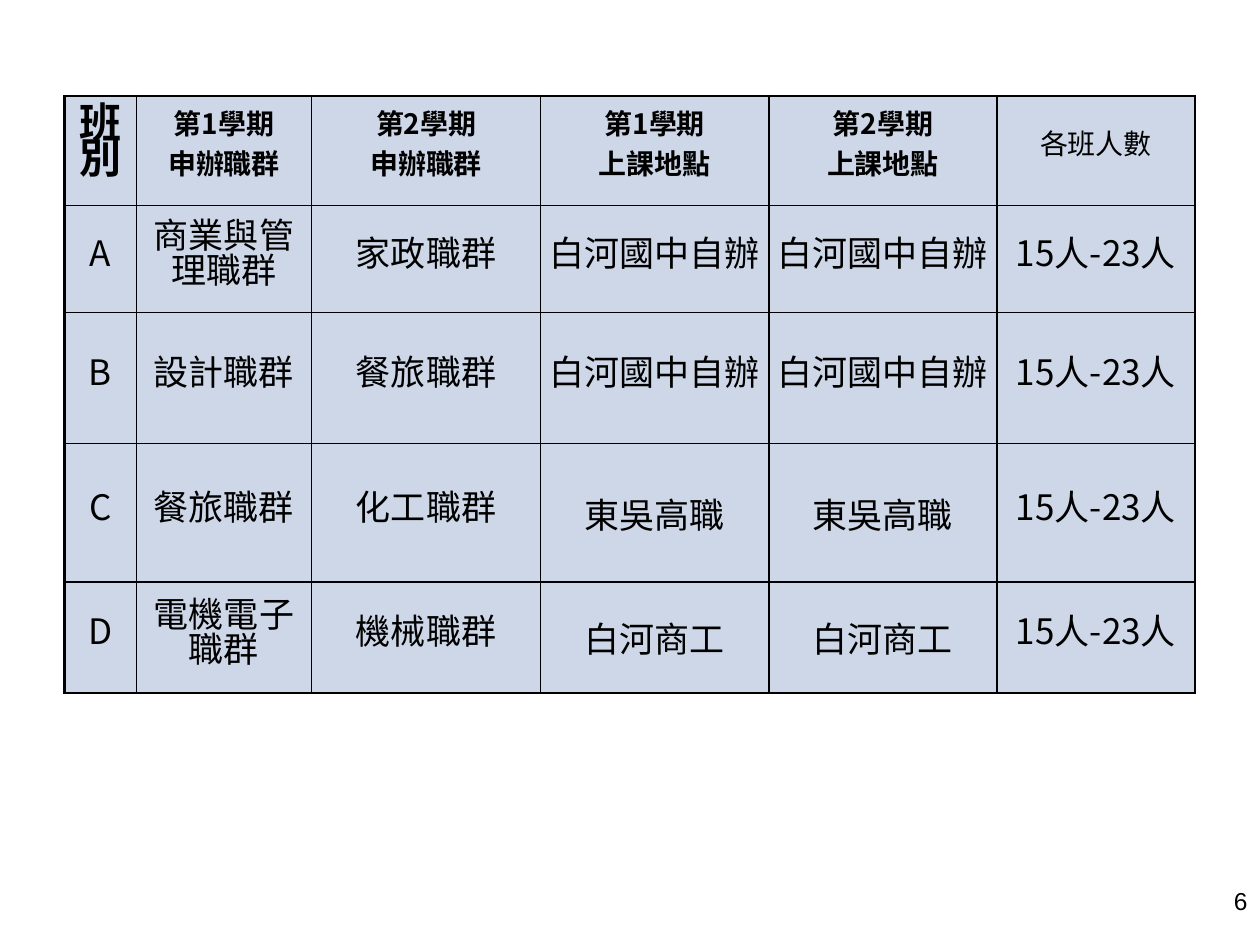
from dataclasses import dataclass

import pptx
import pptx.dml.color
import pptx.enum.text
import pptx.oxml.ns
import pptx.util
from lxml import etree
from pptx.util import Cm, Pt


@dataclass(frozen=True)
class Theme:
    ink: str = "000000"
    cell: str = "CED7E7"
    table_font: str = "Noto Sans CJK SC"
    number_font: str = "Arial"
    corner_size: int = 24
    body_size: int = 20
    header_size: int = 16
    number_size: int = 14
    outer_line: float = 1.5
    inner_line: float = 1


THEME = Theme()
ALIGN = pptx.enum.text.PP_ALIGN
COLUMN_WIDTHS = (1.45, 3.53, 4.62, 4.6, 4.6, 3.99)
ROW_HEIGHTS = (2.21, 2.16, 2.64, 2.79, 2.24)
HEADERS = (
    ("班別",),
    ("第1學期", "申辦職群"),
    ("第2學期", "申辦職群"),
    ("第1學期", "上課地點"),
    ("第2學期", "上課地點"),
    ("各班人數",),
)
CLASS_SIZE = "15人-23人"
SELF_RUN = "白河國中自辦"
# class, first-term group, second-term group, venue for both terms
CLASSES = (
    ("A", "商業與管理職群", "家政職群", SELF_RUN),
    ("B", "設計職群", "餐旅職群", SELF_RUN),
    ("C", "餐旅職群", "化工職群", "東吳高職"),
    ("D", "電機電子職群", "機械職群", "白河商工"),
)


def sub_element(parent, tag, **attributes):
    return etree.SubElement(parent, pptx.oxml.ns.qn(tag), **attributes)


def add_run(paragraph, wording, font, size, bold=False):
    run = paragraph.add_run()
    run.text = wording
    run.font.name = font
    run.font.size = Pt(size)
    run.font.bold = bold
    run.font.color.rgb = pptx.dml.color.RGBColor.from_string(THEME.ink)
    sub_element(run.font._element, "a:ea", typeface=font)


def write_cell(cell, lines, size, bold=False, spacing=None):
    """Write centred lines; spacing is the fixed line height in points."""
    cell.vertical_anchor = pptx.enum.text.MSO_ANCHOR.MIDDLE
    cell.margin_left = cell.margin_right = Cm(0.13)
    cell.margin_top = cell.margin_bottom = Cm(0.13)
    frame = cell.text_frame
    for index, line in enumerate(lines):
        paragraph = frame.add_paragraph() if index else frame.paragraphs[0]
        paragraph.alignment = ALIGN.CENTER
        if spacing:
            paragraph.line_spacing = Pt(spacing)
            paragraph.space_before = Pt(4.5 if index else 0)
            paragraph.space_after = Pt(4.5)
        add_run(paragraph, line, THEME.table_font, size, bold)


def style_cell(cell, row, column):
    """Draw the borders, heavier on the table's left and top, then the fill."""
    properties = cell._tc.get_or_add_tcPr()
    heavy = {"L": column == 0, "T": row == 0}
    for side in "LRTB":
        width = THEME.outer_line if heavy.get(side) else THEME.inner_line
        line = sub_element(properties, f"a:ln{side}", w=str(Pt(width)))
        sub_element(sub_element(line, "a:solidFill"), "a:srgbClr", val=THEME.ink)
    cell.fill.solid()
    cell.fill.fore_color.rgb = pptx.dml.color.RGBColor.from_string(THEME.cell)


def write_headers(table):
    last = len(HEADERS) - 1
    for column, lines in enumerate(HEADERS):
        size, spacing = (THEME.header_size, 14) if column else (THEME.corner_size, 20)
        write_cell(table.cell(0, column), lines, size, column != last, spacing)


def write_classes(table):
    for row, (name, first_group, second_group, venue) in enumerate(CLASSES, 1):
        entries = (name, first_group, second_group, venue, venue, CLASS_SIZE)
        for column, entry in enumerate(entries):
            outside_venue = entry == venue != SELF_RUN
            spacing = None if outside_venue else 20
            write_cell(table.cell(row, column), (entry,), THEME.body_size, spacing=spacing)


def add_class_table(slide):
    table = slide.shapes.add_table(
        len(ROW_HEIGHTS), len(COLUMN_WIDTHS), Cm(1.3), Cm(1.93),
        Cm(sum(COLUMN_WIDTHS)), Cm(sum(ROW_HEIGHTS)),
    ).table
    table.first_row = table.horz_banding = False
    for column, width in zip(table.columns, COLUMN_WIDTHS):
        column.width = Cm(width)
    for row, height in zip(table.rows, ROW_HEIGHTS):
        row.height = Cm(height)
    for row in range(len(ROW_HEIGHTS)):
        for column in range(len(COLUMN_WIDTHS)):
            style_cell(table.cell(row, column), row, column)
    write_headers(table)
    write_classes(table)


def add_page_number(slide, number):
    frame = slide.shapes.add_textbox(Cm(19.47), Cm(17.73), Cm(5.93), Cm(1.32)).text_frame
    frame.word_wrap = True
    paragraph = frame.paragraphs[0]
    paragraph.alignment = ALIGN.RIGHT
    add_run(paragraph, number, THEME.number_font, THEME.number_size)


def main():
    presentation = pptx.Presentation()
    presentation.slide_width, presentation.slide_height = Cm(25.4), Cm(19.05)
    blank_layout = presentation.slide_layouts[6]
    slide = presentation.slides.add_slide(blank_layout)
    add_page_number(slide, "6")
    add_class_table(slide)
    presentation.save("out.pptx")


if __name__ == "__main__":
    main()
